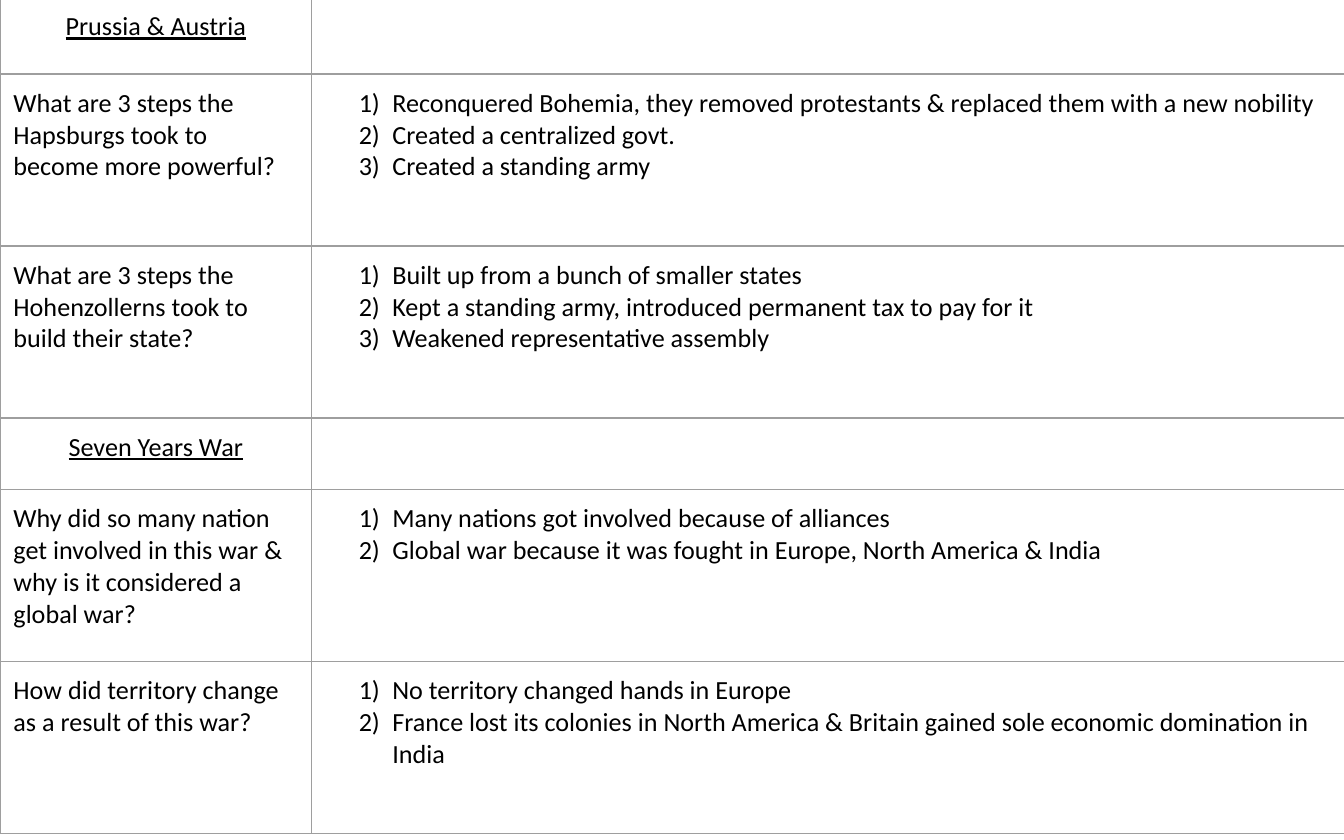
import pptx
import pptx.dml.color
import pptx.enum.text
import pptx.oxml.ns
import pptx.util
from lxml import etree

Pt = pptx.util.Pt
COLORS = {"ink": "000000", "rule": "9E9E9E"}

COLUMN_WIDTHS = [167, 554.4]
HEADING_HEIGHTS = [41, 38.3]
QUESTION_HEIGHT = 92.2

TOPICS = [
    ("Prussia & Austria", [
        ("What are 3 steps the Hapsburgs took to become more powerful?", [
            "Reconquered Bohemia, they removed protestants & replaced them with a new nobility",
            "Created a centralized govt.",
            "Created a standing army",
        ]),
        ("What are 3 steps the Hohenzollerns took to build their state?", [
            "Built up from a bunch of smaller states",
            "Kept a standing army, introduced permanent tax to pay for it",
            "Weakened representative assembly",
        ]),
    ]),
    ("Seven Years War", [
        ("Why did so many nation get involved in this war & why is it considered a global war?", [
            "Many nations got involved because of alliances",
            "Global war because it was fought in Europe, North America & India",
        ]),
        ("How did territory change as a result of this war?", [
            "No territory changed hands in Europe",
            "France lost its colonies in North America & Britain gained sole economic domination in India",
        ]),
    ]),
]


def add_xml(parent, tag, **attributes):
    child = etree.SubElement(parent, pptx.oxml.ns.qn(tag))
    for key, value in attributes.items():
        child.set(key, str(value))
    return child


def write(paragraph, text, *, font, size, color, underline=False, centered=False, numbered=False):
    if centered:
        paragraph.alignment = pptx.enum.text.PP_ALIGN.CENTER
    if numbered:
        properties = paragraph._p.get_or_add_pPr()
        properties.set("marL", str(Pt(36)))
        properties.set("indent", str(Pt(-18)))
        add_xml(properties, "a:buFont", typeface=font)
        add_xml(properties, "a:buAutoNum", type="arabicParenR")
    run = paragraph.add_run()
    run.text = text
    run.font.name = font
    run.font.size = Pt(size)
    run.font.underline = underline
    run.font.color.rgb = pptx.dml.color.RGBColor.from_string(COLORS[color])


class StudyGuide:
    def __init__(self, slide):
        self.slide = slide
        self.text_style = {"font": "Calibri", "size": 14, "color": "ink"}
        self.margin = Pt(7.2)
        self.rule_width = Pt(0.75)

    def table(self, left, top, widths, heights):
        frame = self.slide.shapes.add_table(
            len(heights), len(widths), Pt(left), Pt(top), Pt(sum(widths)), Pt(sum(heights)))
        grid = frame.table
        grid.first_row = grid.horz_banding = False
        for column, width in zip(grid.columns, widths):
            column.width = Pt(width)
        for row, height in zip(grid.rows, heights):
            row.height = Pt(height)
        return grid

    def cell(self, cell, lines, **text_format):
        cell.margin_left = cell.margin_right = self.margin
        cell.margin_top = cell.margin_bottom = self.margin
        self.borders(cell)
        cell.fill.background()
        for index, line in enumerate(lines):
            frame = cell.text_frame
            paragraph = frame.add_paragraph() if index else frame.paragraphs[0]
            write(paragraph, line, **self.text_style, **text_format)

    def borders(self, cell):
        properties = cell._tc.get_or_add_tcPr()
        for side in ("a:lnL", "a:lnR", "a:lnT", "a:lnB"):
            edge = add_xml(properties, side, w=self.rule_width)
            add_xml(add_xml(edge, "a:solidFill"), "a:srgbClr", val=COLORS["rule"])


def main():
    presentation = pptx.Presentation()
    presentation.slide_width = Pt(720)
    presentation.slide_height = Pt(450)
    guide = StudyGuide(presentation.slides.add_slide(presentation.slide_layouts[6]))

    heights = []
    for heading_height, (_, questions) in zip(HEADING_HEIGHTS, TOPICS):
        heights += [heading_height] + [QUESTION_HEIGHT] * len(questions)
    grid = guide.table(0, -1.4, COLUMN_WIDTHS, heights)

    rows = iter(grid.rows)
    for topic, questions in TOPICS:
        heading, blank = next(rows).cells
        guide.cell(heading, [topic], underline=True, centered=True)
        guide.cell(blank, [])
        for question, answers in questions:
            prompt, response = next(rows).cells
            guide.cell(prompt, [question])
            guide.cell(response, answers, numbered=True)

    presentation.save("out.pptx")


if __name__ == "__main__":
    main()
